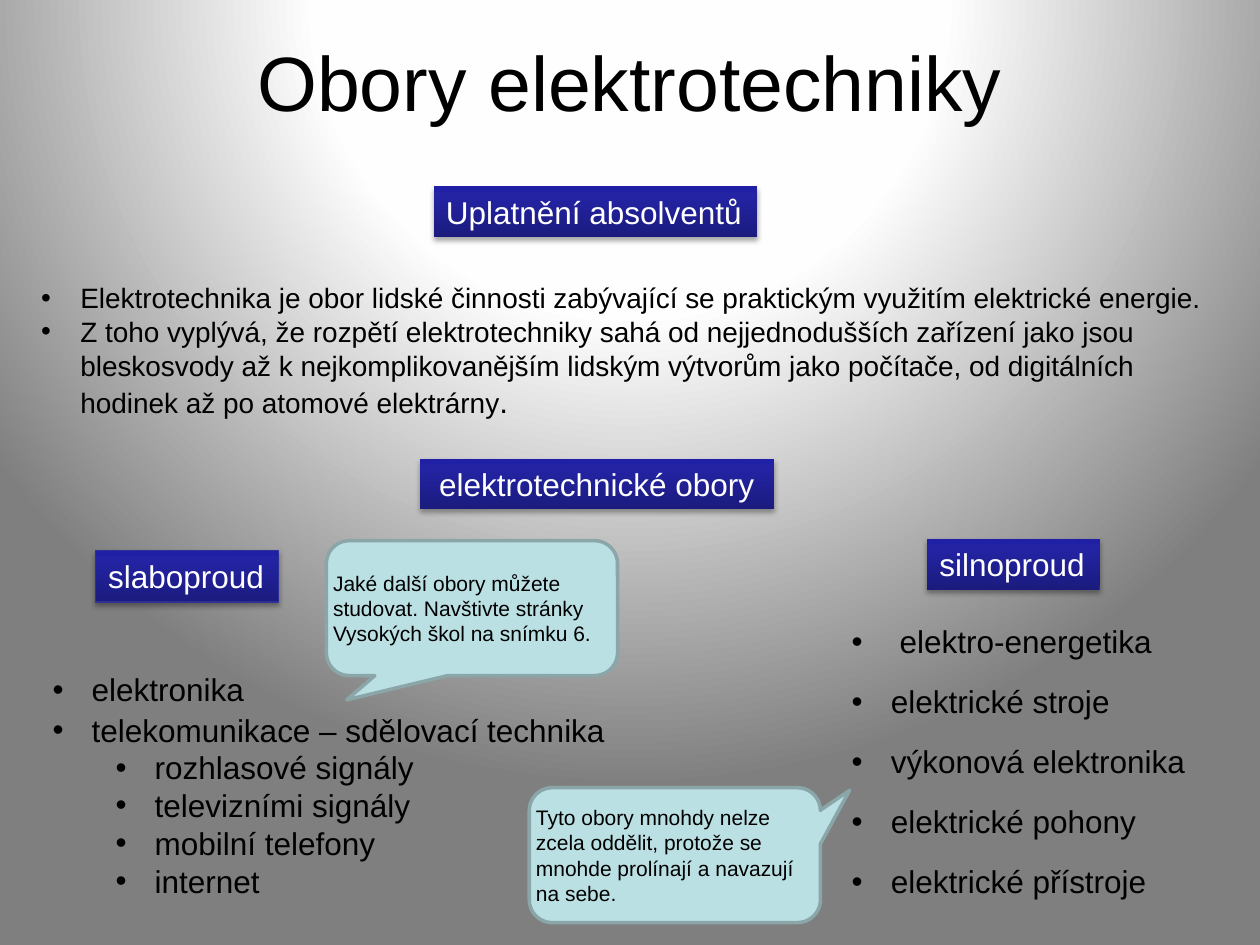
from pptx import Presentation
from pptx.dml.color import RGBColor
from pptx.enum.shapes import MSO_SHAPE as Shp
from pptx.enum.text import MSO_ANCHOR as Anchor, MSO_AUTO_SIZE as Auto, PP_ALIGN as Align
from pptx.oxml import parse_xml
from pptx.oxml.ns import nsdecls, qn
from pptx.util import Cm, Pt

BLACK, WHITE = "000000", "FFFFFF"
INDENT = 0.79
PITCH = 1.21
LINE_H = 1.02

INTRO = [
    (0, [("Elektrotechnika je obor lidské činnosti zabývající se praktickým "
          "využitím elektrické energie.", 16)]),
    (0, [("Z toho vyplývá, že rozpětí elektrotechniky sahá od nejjednodušších "
          "zařízení jako jsou bleskosvody až k nejkomplikovanějším lidským "
          "výtvorům jako počítače, od digitálních hodinek až po atomové "
          "elektrárny", 16), (".", 18)]),
]
WEAK = ["rozhlasové signály", "televizními signály", "mobilní telefony", "internet"]
STRONG = [
    (" elektro-energetika", 6.55, False),
    ("elektrické stroje", 5.77, False),
    ("výkonová elektronika", 8.08, True),
    ("elektrické pohony", 6.3, False),
    ("elektrické přístroje", 6.53, False),
]
TAGS = [
    ("Uplatnění absolventů", (8.74, 3.76, 6.53, LINE_H), False, None),
    ("elektrotechnické obory", (8.46, 9.25, 7.14, LINE_H), True, None),
    ("slaboproud", (1.93, 11.1, 3.68, 1.04), False, "2F2F98"),
    ("silnoproud", (18.69, 10.87, 3.48, LINE_H), False, None),
]
CALLOUTS = [
    ("Tyto obory mnohdy nelze zcela oddělit, protože se mnohde prolínají "
     "a navazují na sebe.", (10.67, 15.88, 5.87, 2.72), (0.6, -0.48, 0.17)),
    ("Jaké další obory můžete studovat. Navštivte stránky Vysokých škol "
     "na snímku 6.", (6.58, 10.9, 5.87, 2.72), (-0.43, 0.68, 0.17)),
]


def rgb(value):
    """Turn a hex string into a colour."""
    return RGBColor.from_string(value)


def apply(obj, values):
    """Set each attribute named in a dict of format values."""
    for name, value in values.items():
        setattr(obj, name, value)


def set_gradient(parent, stops, shade):
    """Replace the solid fill of an element with a gradient."""
    gs = "".join(f'<a:gs pos="{pos * 1000}"><a:srgbClr val="{rgb(c)}"/></a:gs>'
                 for pos, c in stops)
    grad = parse_xml(f'<a:gradFill {nsdecls("a")} rotWithShape="1">'
                     f'<a:gsLst>{gs}</a:gsLst>{shade}</a:gradFill>')
    parent.replace(parent.find(qn("a:solidFill")), grad)


def add_run(p, text, size, color=BLACK):
    """Add a formatted run to a paragraph."""
    r = p.add_run()
    r.text = text
    apply(r.font, {"name": "Arial", "size": Pt(size)})
    r.font.color.rgb = rgb(color)


def add_bullet(p, level=0):
    """Give a paragraph a hanging bullet for its level."""
    p.level = level
    pPr = p._p.get_or_add_pPr()
    pPr.set("marL", str(Cm(INDENT + 1.27 * level)))
    pPr.set("indent", str(-Cm(INDENT)))
    pPr.append(parse_xml(f'<a:buFont {nsdecls("a")} typeface="Arial"/>'))
    pPr.append(parse_xml(f'<a:buChar {nsdecls("a")} char="•"/>'))


def add_title(s, box, text):
    """Place the centred slide title."""
    tf = s.shapes.add_textbox(*map(Cm, box)).text_frame
    apply(tf, {"word_wrap": True, "vertical_anchor": Anchor.MIDDLE})
    p = tf.paragraphs[0]
    p.alignment = Align.CENTER
    add_run(p, text, 44)


def add_list(s, box, items, wrap):
    """Place a bulleted list of (level, runs) items."""
    tf = s.shapes.add_textbox(*map(Cm, box)).text_frame
    apply(tf, {"word_wrap": wrap, "auto_size": Auto.SHAPE_TO_FIT_TEXT})
    for i, (level, runs) in enumerate(items):
        p = tf.add_paragraph() if i else tf.paragraphs[0]
        add_bullet(p, level)
        for text, size in runs:
            add_run(p, text, size)


def add_tag(s, text, box, wrap, line):
    """Place a blue heading tag with a soft shadow."""
    sp = s.shapes.add_shape(Shp.RECTANGLE, *map(Cm, box))
    sp.fill.solid()
    if line:
        sp.line.color.rgb = rgb(line)
        sp.line.width = Pt(0.75)
    else:
        sp.line.fill.background()
    sp.shadow.inherit = False
    spPr = sp._element.spPr
    set_gradient(spPr, [(0, "1B1B7E"), (80, "2323A3"), (100, "2020A6")],
                 '<a:lin ang="16200000" scaled="0"/>')
    spPr.find(qn("a:effectLst")).append(parse_xml(
        f'<a:outerShdw {nsdecls("a")} blurRad="{Pt(3.1)}" dist="{Pt(1.8)}" '
        f'dir="5400000" rotWithShape="0"><a:srgbClr val="{rgb(BLACK)}">'
        '<a:alpha val="35000"/></a:srgbClr></a:outerShdw>'))
    tf = sp.text_frame
    apply(tf, {"word_wrap": wrap, "auto_size": Auto.SHAPE_TO_FIT_TEXT,
               "vertical_anchor": Anchor.TOP})
    p = tf.paragraphs[0]
    p.alignment = Align.CENTER if wrap else Align.LEFT
    add_run(p, text, 18, WHITE)


def add_callout(s, text, box, adjust):
    """Place a rounded speech bubble."""
    sp = s.shapes.add_shape(Shp.ROUNDED_RECTANGULAR_CALLOUT, *map(Cm, box))
    for i, value in enumerate(adjust):
        sp.adjustments[i] = value
    sp.fill.solid()
    sp.fill.fore_color.rgb = rgb("BBE0E3")
    sp.line.color.rgb = rgb("8AA6A8")
    sp.line.width = Pt(2)
    sp.shadow.inherit = False
    tf = sp.text_frame
    apply(tf, {"word_wrap": True, "vertical_anchor": Anchor.MIDDLE,
               "margin_left": 0, "margin_right": 0,
               "margin_top": Cm(0.13), "margin_bottom": Cm(0.13)})
    p = tf.paragraphs[0]
    p.alignment = Align.LEFT
    add_run(p, text, 12)


def add_weak_fields(s, box):
    """Place the low-current fields and their sublist."""
    x, y, w, h = box
    add_list(s, (x, y, 4.37, LINE_H), [(0, [("elektronika", 18)])], False)
    items = [(0, [("telekomunikace – sdělovací technika", 18)])]
    items += [(1, [(text, 18)]) for text in WEAK]
    add_list(s, (x, y + 0.81, w, h - 0.81), items, False)


def add_strong_fields(s, box):
    """Place the power fields at an equal pitch."""
    x, y = box[:2]
    for i, (text, w, wrap) in enumerate(STRONG):
        add_list(s, (x, y + i * PITCH, w, LINE_H), [(0, [(text, 18)])], wrap)


def add_background(s):
    """Fill the background with a radial grey gradient."""
    s.background.fill.solid()
    set_gradient(s.element.find(".//" + qn("p:bgPr")),
                 [(0, WHITE), (40, "FEFEFE"), (100, "7F7F7F")],
                 '<a:path path="circle"><a:fillToRect l="50000" t="-80000" '
                 'r="50000" b="180000"/></a:path>')


def main():
    """Build the slide and save it."""
    prs = Presentation()
    apply(prs, {"slide_width": Cm(25.4), "slide_height": Cm(19.05)})
    s = prs.slides.add_slide(prs.slide_layouts[6])
    add_background(s)
    add_title(s, (0, 0.76, 25.4, 1.75), "Obory elektrotechniky")
    add_list(s, (0.58, 5.54, 23.98, 3.07), INTRO, True)
    for tag in TAGS:
        add_tag(s, *tag)
    add_weak_fields(s, (0.81, 13.39, 11.81, 4.87))
    add_strong_fields(s, (16.92, 12.42, 8.08, 5.86))
    for callout in CALLOUTS:
        add_callout(s, *callout)
    prs.save("out.pptx")


if __name__ == "__main__":
    main()
